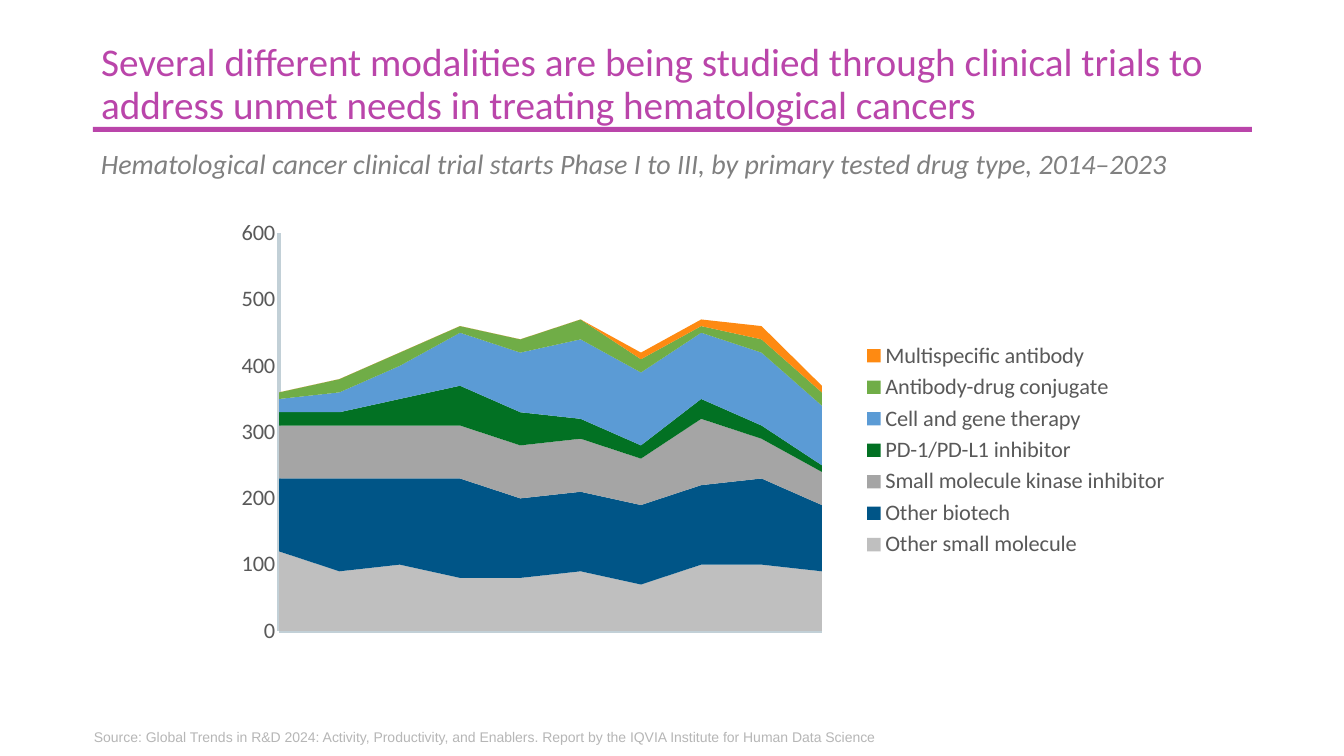
from pptx import Presentation
from pptx.chart.data import CategoryChartData
from pptx.dml.color import RGBColor
from pptx.enum.chart import (XL_CHART_TYPE, XL_LEGEND_POSITION, XL_TICK_LABEL_POSITION,
                             XL_TICK_MARK)
from pptx.enum.shapes import MSO_SHAPE
from pptx.enum.text import MSO_ANCHOR, PP_ALIGN
from pptx.oxml import parse_xml
from pptx.oxml.ns import nsdecls, qn
from pptx.util import Pt

AREA = XL_CHART_TYPE.AREA_STACKED
RIGHT = XL_LEGEND_POSITION.RIGHT
NO_LABEL = XL_TICK_LABEL_POSITION.NONE
NO_TICK = XL_TICK_MARK.NONE
RECT = MSO_SHAPE.RECTANGLE
MIDDLE, BOTTOM = MSO_ANCHOR.MIDDLE, MSO_ANCHOR.BOTTOM
LEFT = PP_ALIGN.LEFT

PURPLE = RGBColor(0xBA, 0x45, 0xAA)
GREY = RGBColor(0x80, 0x80, 0x80)
PALE = RGBColor(0xB6, 0xB6, 0xB6)
DARK = RGBColor(0x59, 0x59, 0x59)
AXIS = RGBColor(0xC2, 0xD0, 0xD7)

YEARS = [str(year) for year in range(2014, 2024)]
DRUGS = [
    ("Other small molecule", RGBColor(0xBF, 0xBF, 0xBF),
     (120, 90, 100, 80, 80, 90, 70, 100, 100, 90)),
    ("Other biotech", RGBColor(0x00, 0x55, 0x87),
     (110, 140, 130, 150, 120, 120, 120, 120, 130, 100)),
    ("Small molecule kinase inhibitor", RGBColor(0xA5, 0xA5, 0xA5),
     (80, 80, 80, 80, 80, 80, 70, 100, 60, 50)),
    ("PD-1/PD-L1 inhibitor", RGBColor(0x02, 0x71, 0x23),
     (20, 20, 40, 60, 50, 30, 20, 30, 20, 10)),
    ("Cell and gene therapy", RGBColor(0x5B, 0x9B, 0xD5),
     (20, 30, 50, 80, 90, 120, 110, 100, 110, 90)),
    ("Antibody-drug conjugate", RGBColor(0x70, 0xAD, 0x47),
     (10, 20, 20, 10, 20, 30, 20, 10, 20, 20)),
    ("Multispecific antibody", RGBColor(0xFE, 0x8A, 0x12),
     (0, 0, 0, 0, 0, 0, 10, 10, 20, 10)),
]


def set_font(font, name, size, color):
    font.name = name
    font.size = Pt(size)
    font.color.rgb = color


def set_text(shape, text, name, size, color, anchor=MIDDLE):
    """Fill a placeholder or text box with one left-aligned paragraph."""
    frame = shape.text_frame
    frame.word_wrap = True
    frame.vertical_anchor = anchor
    frame.text = text
    line = frame.paragraphs[0]
    line.alignment = LEFT
    line.line_spacing = 0.9
    set_font(line.font, name, size, color)
    return frame


def add_title(slide, text):
    title = slide.shapes.title
    title.left, title.top, title.width, title.height = Pt(65), Pt(26), Pt(828), Pt(70)
    set_text(title, text, "Calibri", 28, PURPLE)


def add_text(slide, box, text, *style):
    return set_text(slide.shapes.add_textbox(*map(Pt, box)), text, *style)


def add_rule(slide):
    rule = slide.shapes.add_shape(RECT, Pt(66.3), Pt(90.7), Pt(828), Pt(3.6))
    rule.shadow.inherit = False
    rule.fill.solid()
    rule.fill.fore_color.rgb = PURPLE
    rule.line.fill.background()


def style_axis(axis):
    axis.has_major_gridlines = False
    axis.major_tick_mark = axis.minor_tick_mark = NO_TICK
    axis.format.line.color.rgb = AXIS
    axis.format.line.width = Pt(3)
    set_font(axis.tick_labels.font, "Calibri", 16, DARK)


def place_plot(chart, left, top, width, height):
    """Fix the inner plot area, in fractions of the chart."""
    area = chart.element.find(".//" + qn("c:plotArea"))
    for old in area.findall(qn("c:layout")):
        area.remove(old)
    parts = "".join(f'<c:{tag} val="{value}"/>' for tag, value in
                    zip("xywh", (left, top, width, height)))
    area.insert(0, parse_xml(
        f'<c:layout {nsdecls("c")}><c:manualLayout><c:layoutTarget val="inner"/>'
        f'<c:xMode val="edge"/><c:yMode val="edge"/>{parts}</c:manualLayout></c:layout>'))


def add_areas(slide):
    data = CategoryChartData(number_format="General")
    data.categories = YEARS
    for name, _, counts in DRUGS:
        data.add_series(name, counts)
    chart = slide.shapes.add_chart(AREA, Pt(111.6), Pt(157), Pt(731.5), Pt(326), data).chart
    chart.has_title = False
    set_font(chart.font, "Calibri", 16, DARK)
    for series, (_, color, _) in zip(chart.plots[0].series, DRUGS):
        series.format.fill.solid()
        series.format.fill.fore_color.rgb = color

    years, counts = chart.category_axis, chart.value_axis
    style_axis(years)
    style_axis(counts)
    years.tick_label_position = NO_LABEL
    counts.minimum_scale, counts.maximum_scale, counts.major_unit = 0, 600, 100
    counts.tick_labels.number_format = "#,##0"
    counts.tick_labels.number_format_is_linked = False
    # Areas start on the value axis itself.
    chart.element.find(".//" + qn("c:crossBetween")).set("val", "midCat")

    chart.has_legend = True
    chart.legend.position = RIGHT
    chart.legend.include_in_layout = False
    set_font(chart.legend.font, "Calibri", 16, DARK)
    place_plot(chart, 0.12, 0.02, 0.53, 0.88)


def main():
    deck = Presentation()
    deck.slide_width, deck.slide_height = Pt(960), Pt(540)
    slide = deck.slides.add_slide(deck.slide_layouts[5])
    add_rule(slide)
    add_title(slide, "Several different modalities are being studied through clinical trials "
                     "to address unmet needs in treating hematological cancers")
    lead = add_text(slide, (65, 100, 828, 36),
                    "Hematological cancer clinical trial starts Phase I to III, "
                    "by primary tested drug type, 2014–2023", "Calibri", 20, GREY)
    lead.paragraphs[0].font.italic = True
    add_areas(slide)
    credit = add_text(slide, (60, 518.4, 806, 14.4),
                      "Source: Global Trends in R&D 2024: Activity, Productivity, and Enablers. "
                      "Report by the IQVIA Institute for Human Data Science",
                      "Arial", 10, PALE, BOTTOM)
    credit.margin_bottom = 0
    deck.save("out.pptx")


if __name__ == "__main__":
    main()
